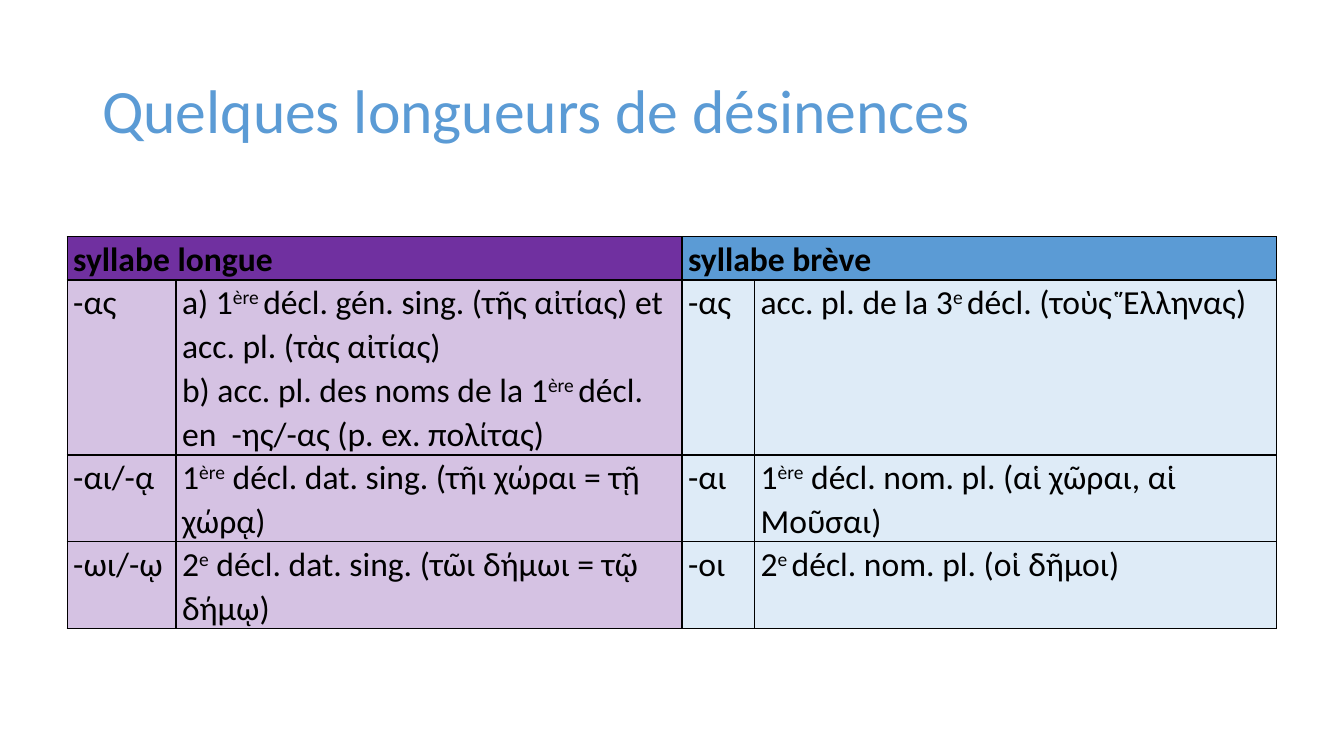
import pptx
import pptx.dml.color
import pptx.enum.text
import pptx.oxml
import pptx.oxml.ns
import pptx.util
from lxml import etree

Pt = pptx.util.Pt
qn = pptx.oxml.ns.qn
COLORS = {
    "black": "000000",
    "blue": "5B9BD5",
    "pale blue": "DEEBF7",
    "purple": "7030A0",
}
FONT = "Calibri"
COLUMN_WIDTHS = [77.76, 361.44, 51.84, 372.96]
ROW_HEIGHTS = [30, 125, 62, 62]
ENDINGS = [
    ["syllabe longue", "", "syllabe brève", ""],
    [
        "-ας",
        "a) 1^ère ^décl. gén. sing. (τῆς αἰτίας) et acc. pl. (τὰς αἰτίας)\n"
        "b) acc. pl. des noms de la 1^ère ^décl. en  -ης/-ας (p. ex. πολίτας)",
        "-ας",
        "acc. pl. de la 3^e ^décl. (τοὺς Ἕλληνας)",
    ],
    [
        "-αι/-ᾳ",
        "1^ère^ décl. dat. sing. (τῆι χώραι = τῇ χώρᾳ)",
        "-αι",
        "1^ère^ décl. nom. pl. (αἱ χῶραι, αἱ Μοῦσαι)",
    ],
    [
        "-ωι/-ῳ",
        "2^e^ décl. dat. sing. (τῶι δήμωι = τῷ δήμῳ)",
        "-οι",
        "2^e ^décl. nom. pl. (οἱ δῆμοι)",
    ],
]


def style_span(span, size, color, bold=False):
    span.font.name = FONT
    span.font.size = Pt(size)
    span.font.bold = bold
    span.font.color.rgb = pptx.dml.color.RGBColor.from_string(COLORS[color])


def add_borders(properties):
    for side in ("lnL", "lnR", "lnT", "lnB"):
        line = etree.SubElement(properties, qn(f"a:{side}"), w=str(Pt(1)))
        fill = etree.SubElement(line, qn("a:solidFill"))
        etree.SubElement(fill, qn("a:srgbClr"), val=COLORS["black"])


deck = pptx.Presentation()
deck.slide_width = Pt(960)
deck.slide_height = Pt(540)
page = deck.slides.add_slide(deck.slide_layouts[6])

title = page.shapes.add_textbox(Pt(66), Pt(28.8), Pt(828), Pt(104.4))
title.text_frame.word_wrap = True
title.text_frame.vertical_anchor = pptx.enum.text.MSO_ANCHOR.MIDDLE
title.text_frame.text = "Quelques longueurs de désinences"
heading = title.text_frame.paragraphs[0]
heading.line_spacing = 0.9
style_span(heading.runs[0], 44, "blue")

frame = page.shapes.add_table(
    len(ROW_HEIGHTS), len(COLUMN_WIDTHS),
    Pt(48), Pt(169.2), Pt(sum(COLUMN_WIDTHS)), Pt(sum(ROW_HEIGHTS)),
)
table = frame.table
table.first_row = False
table.horz_banding = False
for column, width in zip(table.columns, COLUMN_WIDTHS):
    column.width = Pt(width)
for row, height in zip(table.rows, ROW_HEIGHTS):
    row.height = Pt(height)
for first in (0, 2):
    table.cell(0, first).merge(table.cell(0, first + 1))

for row_index, texts in enumerate(ENDINGS):
    for column_index, text in enumerate(texts):
        cell = table.cell(row_index, column_index)
        is_header = row_index == 0
        is_long = column_index < 2
        cell.margin_left = cell.margin_right = Pt(4.32)
        cell.margin_top = cell.margin_bottom = Pt(0)
        properties = cell._tc.get_or_add_tcPr()
        add_borders(properties)
        color = "purple" if is_long else "blue" if is_header else "pale blue"
        cell.fill.solid()
        cell.fill.fore_color.rgb = pptx.dml.color.RGBColor.from_string(COLORS[color])
        if is_long and not is_header:
            tint = properties.find(qn("a:solidFill")).find(qn("a:srgbClr"))
            etree.SubElement(tint, qn("a:alpha"), val="29000")
        if cell.is_spanned:
            continue
        cell.text_frame.text = text
        for para in cell.text_frame.paragraphs:
            para.line_spacing = 1.07
            pieces = para.text.split("^")
            para.text = ""
            for piece_index, piece in enumerate(pieces):
                span = para.add_run()
                span.text = piece
                style_span(span, 24, "black", is_header)
                if piece_index % 2:
                    span.font._element.set("baseline", "30000")

deck.save("out.pptx")
